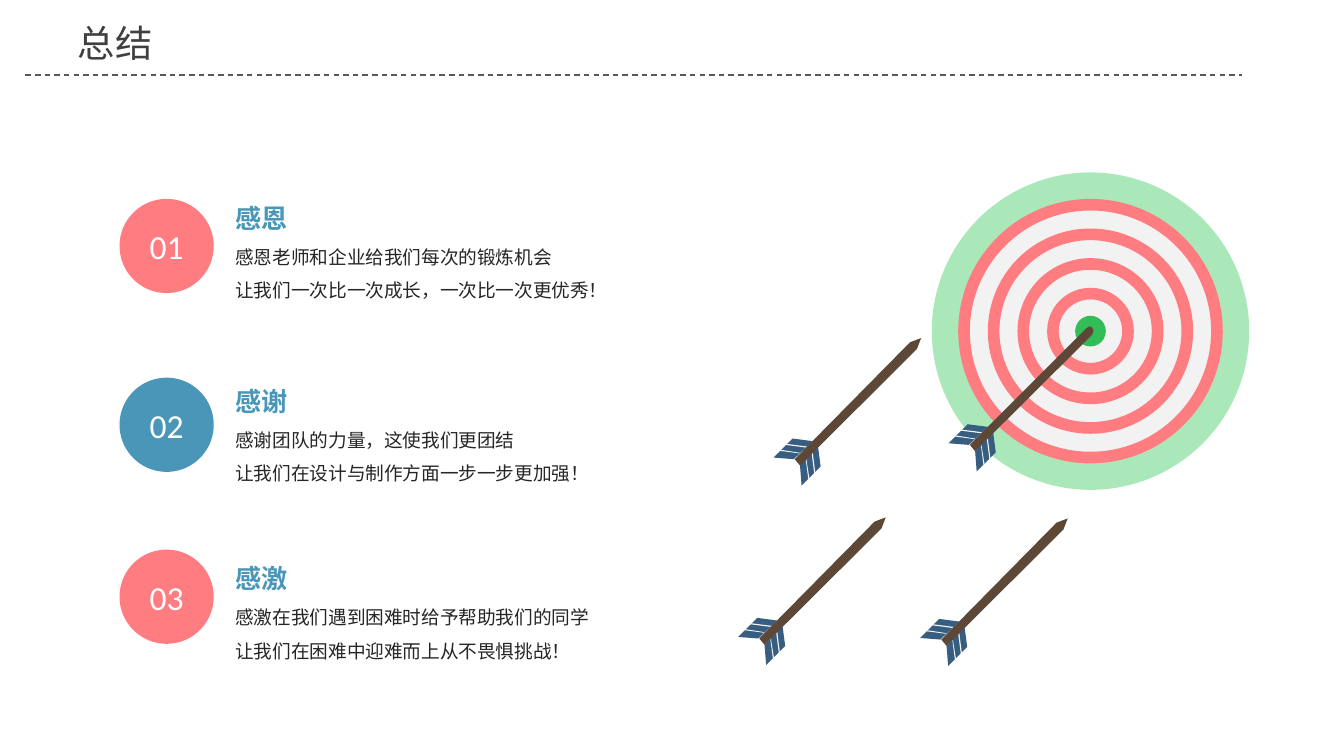
from dataclasses import dataclass

from lxml import etree
from pptx import Presentation
from pptx.dml.color import RGBColor
from pptx.enum.dml import MSO_LINE
from pptx.enum.shapes import MSO_CONNECTOR, MSO_SHAPE as Shape
from pptx.enum.text import MSO_ANCHOR as Anchor, MSO_AUTO_SIZE as AutoSize, PP_ALIGN as Align
from pptx.oxml import parse_xml
from pptx.oxml.ns import nsdecls, qn
from pptx.util import Cm, Pt


@dataclass(frozen=True)
class Theme:
    han: str = "Noto Sans CJK SC"
    latin: str = "Calibri"
    title_size: int = 20
    number_size: int = 18
    heading_size: int = 14
    body_size: int = 10
    title: str = "404040"
    rule: str = "595959"
    body: str = "262626"
    white: str = "FFFFFF"
    coral: str = "FF7C80"
    blue: str = "4996B8"
    mint: str = "AAE8BA"
    green: str = "33BD56"
    pale: str = "F2F2F2"
    feather: str = "375D81"
    wood: str = "5D4837"


theme = Theme()


def paint(shape, color):
    """Give a shape a plain fill without line or shadow."""
    shape.shadow.inherit = False
    shape.fill.solid()
    shape.fill.fore_color.rgb = RGBColor.from_string(color)
    shape.line.fill.background()


def write_run(paragraph, text, size, color, face=theme.han, bold=False):
    run = paragraph.add_run()
    run.text = text
    run.font.size = Pt(size)
    run.font.bold = bold
    run.font.color.rgb = RGBColor.from_string(color)
    run.font.name = face
    etree.SubElement(run.font._element, qn("a:ea")).set("typeface", face)
    return run


deck = Presentation()
deck.slide_width, deck.slide_height = Cm(25.4), Cm(14.29)
slide = deck.slides.add_slide(deck.slide_layouts[5])

# Title and dashed rule
title = slide.shapes.title
title.left, title.top, title.width, title.height = Cm(1.22), Cm(0.25), Cm(9), Cm(1.12)
title.text_frame.auto_size = AutoSize.NONE
title.text_frame.vertical_anchor = Anchor.TOP
title.text_frame.paragraphs[0].alignment = Align.LEFT
title_run = write_run(title.text_frame.paragraphs[0], "总结", theme.title_size, theme.title)
title_run.font.fill._xPr.find(qn("a:solidFill")).addnext(parse_xml(
    f'<a:effectLst {nsdecls("a")}><a:outerShdw blurRad="38100" dist="38100" dir="2700000">'
    '<a:srgbClr val="000000"><a:alpha val="43000"/></a:srgbClr></a:outerShdw></a:effectLst>'))

rule = slide.shapes.add_connector(MSO_CONNECTOR.STRAIGHT, Cm(0.48), Cm(1.42), Cm(23.47), Cm(1.42))
rule.line.color.rgb = RGBColor.from_string(theme.rule)
rule.line.width = Pt(0.75)
rule.line.dash_style = MSO_LINE.DASH
etree.SubElement(rule._element.spPr, qn("a:effectLst"))

# Numbered thanks: number, circle top, heading top, circle colour, heading, lines
thanks = [
    ("01", 3.76, 3.73, theme.coral, "感恩",
     ["感恩老师和企业给我们每次的锻炼机会", "让我们一次比一次成长，一次比一次更优秀！"]),
    ("02", 7.14, 7.19, theme.blue, "感谢",
     ["感谢团队的力量，这使我们更团结", "让我们在设计与制作方面一步一步更加强！"]),
    ("03", 10.39, 10.54, theme.coral, "感激",
     ["感激在我们遇到困难时给予帮助我们的同学", "让我们在困难中迎难而上从不畏惧挑战！"]),
]
for number, circle_top, heading_top, color, heading, lines in thanks:
    body = slide.shapes.add_textbox(Cm(4.27), Cm(heading_top + 0.61), Cm(7.67), Cm(1.47))
    head = slide.shapes.add_textbox(Cm(4.27), Cm(heading_top), Cm(1.37), Cm(0.79))
    circle = slide.shapes.add_shape(Shape.OVAL, Cm(2.26), Cm(circle_top), Cm(1.78), Cm(1.78))
    paint(circle, color)
    for holder in (body, head, circle):
        frame = holder.text_frame
        frame.margin_left = frame.margin_right = Cm(0.18)
        frame.margin_top = frame.margin_bottom = Cm(0.09)
    body.text_frame.word_wrap = True
    head.text_frame.word_wrap = False
    circle.text_frame.vertical_anchor = Anchor.MIDDLE

    for index, line in enumerate(lines):
        paragraph = body.text_frame.add_paragraph() if index else body.text_frame.paragraphs[0]
        paragraph.line_spacing = 1.5
        write_run(paragraph, line, theme.body_size, theme.body)
    write_run(head.text_frame.paragraphs[0], heading, theme.heading_size, theme.blue, bold=True)
    label = circle.text_frame.paragraphs[0]
    label.alignment = Align.CENTER
    write_run(label, number, theme.number_size, theme.white, theme.latin)

# Target: concentric discs and evenly spaced rings
center_x, center_y, band = 20.61, 6.26, 0.22
target = [(Shape.OVAL, 3, theme.mint), (Shape.OVAL, 2.37, theme.pale)]
target += [(Shape.DONUT, 2.5 - 0.56 * step, theme.coral) for step in range(4)]
target += [(Shape.OVAL, 0.29, theme.green)]
for kind, radius, color in target:
    disc = slide.shapes.add_shape(kind, Cm(center_x - radius), Cm(center_y - radius),
                                  Cm(2 * radius), Cm(2 * radius))
    paint(disc, color)
    if kind == Shape.DONUT:
        disc.adjustments[0] = band / (2 * radius)

# Arrows: outlines in cm from the tail; the upper vane mirrors the lower one
lower_vane = [
    ([(0.44, -0.24), (0.49, 0.14), (0.13, 0.5), (0.1, 0.12)], theme.feather),
    ([(0.34, -0.13), (0.39, 0.26), (0.37, 0.28), (0.32, -0.11)], theme.pale),
    ([(0.22, 0), (0.28, 0.38), (0.26, 0.4), (0.21, 0.02)], theme.pale),
]
upper_vane = [([(0.1 - y, 0.1 - x) for x, y in points], color) for points, color in lower_vane]
sharp_tip = [(2.18, -2.21), (2.39, -2.29), (2.31, -2.08)]
blunt_tip = [(2.21, -2.21), (2.26, -2.24), (2.31, -2.22), (2.34, -2.16), (2.31, -2.08)]
arrows = [(14.35, 12.07, sharp_tip), (15.02, 8.68, sharp_tip),
          (17.79, 12.09, sharp_tip), (18.33, 8.41, blunt_tip)]
for tail_x, tail_y, tip in arrows:
    arrow = slide.shapes.add_group_shape()
    shaft = (tip + [(0.1, 0.12), (0, 0)], theme.wood)
    for points, color in lower_vane + upper_vane + [shaft]:
        corners = [(Cm(tail_x + x), Cm(tail_y + y)) for x, y in points]
        outline = arrow.shapes.build_freeform(*corners[0])
        outline.add_line_segments(corners[1:], close=True)
        paint(outline.convert_to_shape(), color)

deck.save("out.pptx")
